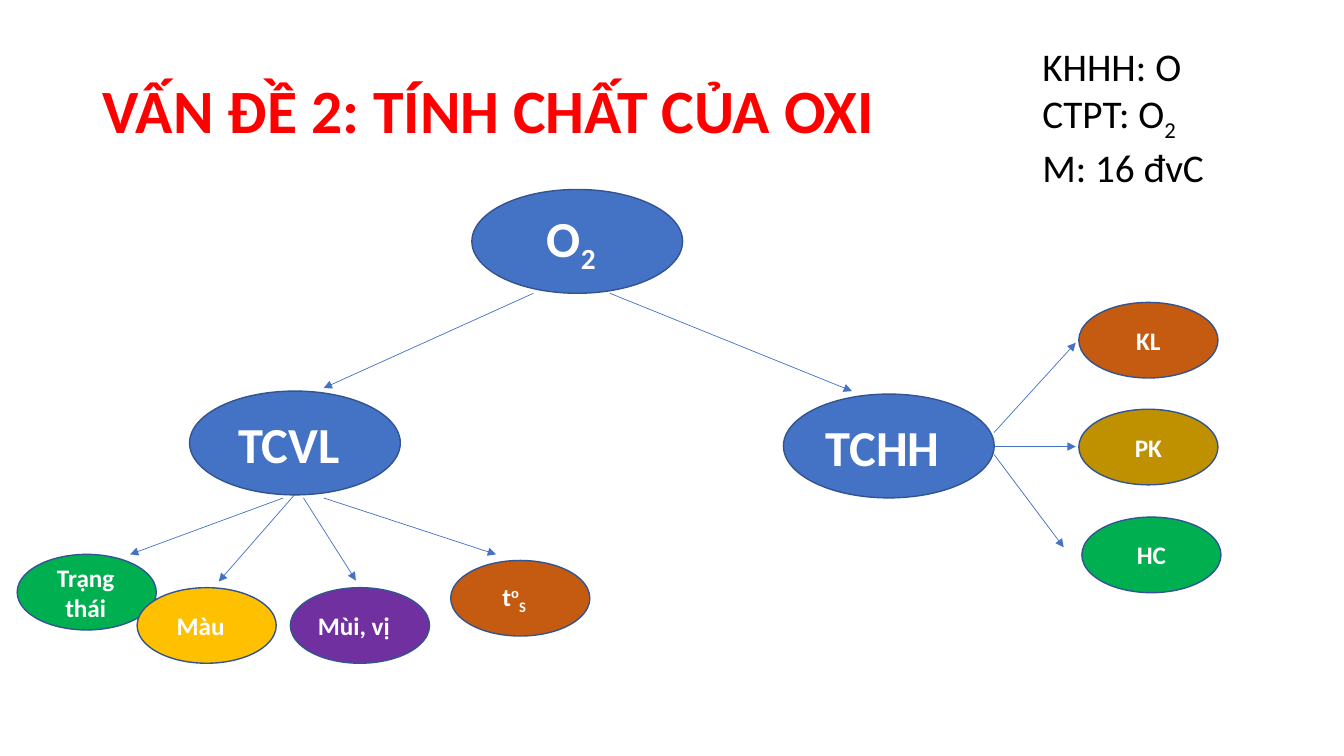
"""Build a slide that maps the physical and chemical properties of oxygen."""
from lxml.etree import SubElement
from pptx import Presentation
from pptx.dml.color import RGBColor
from pptx.enum.shapes import MSO_CONNECTOR, MSO_SHAPE
from pptx.enum.text import MSO_ANCHOR, MSO_AUTO_SIZE, PP_ALIGN
from pptx.oxml.ns import qn
from pptx.util import Emu, Pt

PX = 9144
FONT = "Calibri"
COLORS = {
    "red": "FF0000", "black": "000000", "white": "FFFFFF", "blue": "4472C4",
    "outline": "325491", "green": "00B050", "yellow": "FFC000",
    "purple": "7030A0", "orange": "C55A11", "gold": "BF9000",
}
SUB, SUPER = -25, 30

TITLE = [("VẤN ĐỀ 2: TÍNH CHẤT CỦA OXI", 0)]
FACTS = [
    [("KHHH: O", 0)],
    [("CTPT: O", 0), ("2", SUB)],
    [("M: 16 đvC", 0)],
]

TOPIC = {"size": (209, 103), "points": 36}
DETAIL = {"size": (138, 75), "points": 18}
NODES = [
    (TOPIC, 468, 188, "blue", 6, [("O", 0), ("2", SUB)]),
    (TOPIC, 188, 388, "blue", 6, [("TCVL", 0)]),
    (TOPIC, 777, 391, "blue", 6, [("TCHH", 0)]),
    (DETAIL, 17, 550, "green", 1, [("Trạng thái", 0)]),
    (DETAIL, 136, 583, "yellow", 6, [("Màu", 0)]),
    (DETAIL, 288, 583, "purple", 6, [("Mùi, vị", 0)]),
    (DETAIL, 447, 556, "orange", 6, [("t", 0), ("o", SUPER), ("S", SUB)]),
    (DETAIL, 1070, 300, "orange", 0, [("KL", 0)]),
    (DETAIL, 1070, 406, "gold", 0, [("PK", 0)]),
    (DETAIL, 1073, 513, "green", 0, [("HC", 0)]),
]
ARROWS = [
    ((529, 291), (321, 385)),
    ((605, 291), (845, 388)),
    ((281, 494), (129, 550)),
    ((292, 491), (217, 577)),
    ((301, 494), (353, 576)),
    ((321, 494), (492, 550)),
    ((986, 429), (1067, 340)),
    ((986, 443), (1067, 443)),
    ((986, 451), (1055, 543)),
]


def px(*lengths):
    return [Emu(length * PX) for length in lengths]


def color(name):
    return RGBColor.from_string(COLORS[name])


def add_runs(para, runs, points, color_name, bold):
    for text, baseline in runs:
        span = para.add_run()
        span.text = text
        span.font.name = FONT
        span.font.size = Pt(points)
        span.font.bold = bold
        span.font.color.rgb = color(color_name)
        if baseline:
            span._r.get_or_add_rPr().set("baseline", str(baseline * 1000))


def format_title(title):
    title.left, title.top, title.width, title.height = px(92, 40, 1150, 145)
    frame = title.text_frame
    frame.auto_size = MSO_AUTO_SIZE.NONE
    frame.vertical_anchor = MSO_ANCHOR.MIDDLE
    para = frame.paragraphs[0]
    para.alignment = PP_ALIGN.LEFT
    para.line_spacing = 0.9
    add_runs(para, TITLE, 44, "red", True)


def add_facts(slide):
    frame = slide.shapes.add_textbox(*px(1024, 37, 183, 151)).text_frame
    frame.word_wrap = False
    frame.auto_size = MSO_AUTO_SIZE.SHAPE_TO_FIT_TEXT
    for index, runs in enumerate(FACTS):
        para = frame.add_paragraph() if index else frame.paragraphs[0]
        add_runs(para, runs, 28, "black", False)


def add_node(slide, style, left, top, fill, shift, runs):
    node = slide.shapes.add_shape(MSO_SHAPE.OVAL, *px(left, top, *style["size"]))
    node.shadow.inherit = False
    node.fill.solid()
    node.fill.fore_color.rgb = color(fill)
    node.line.color.rgb = color("outline")
    node.line.width = Pt(1)
    frame = node.text_frame
    frame.word_wrap = True
    frame.vertical_anchor = MSO_ANCHOR.MIDDLE
    frame.margin_left, frame.margin_right = px(10 - shift, 10 + shift)
    para = frame.paragraphs[0]
    para.alignment = PP_ALIGN.CENTER
    add_runs(para, runs, style["points"], "white", True)


def add_arrow(slide, start, end):
    arrow = slide.shapes.add_connector(MSO_CONNECTOR.STRAIGHT, *px(*start, *end))
    arrow.line.color.rgb = color("blue")
    arrow.line.width = Pt(0.5)
    SubElement(arrow.line._get_or_add_ln(), qn("a:tailEnd"), type="triangle")
    SubElement(arrow._element.spPr, qn("a:effectLst"))


def main():
    deck = Presentation()
    deck.slide_width, deck.slide_height = px(1333, 750)
    slide = deck.slides.add_slide(deck.slide_layouts[5])
    format_title(slide.shapes.title)
    add_facts(slide)
    for start, end in ARROWS:
        add_arrow(slide, start, end)
    for node in NODES:
        add_node(slide, *node)
    deck.save("out.pptx")


if __name__ == "__main__":
    main()
